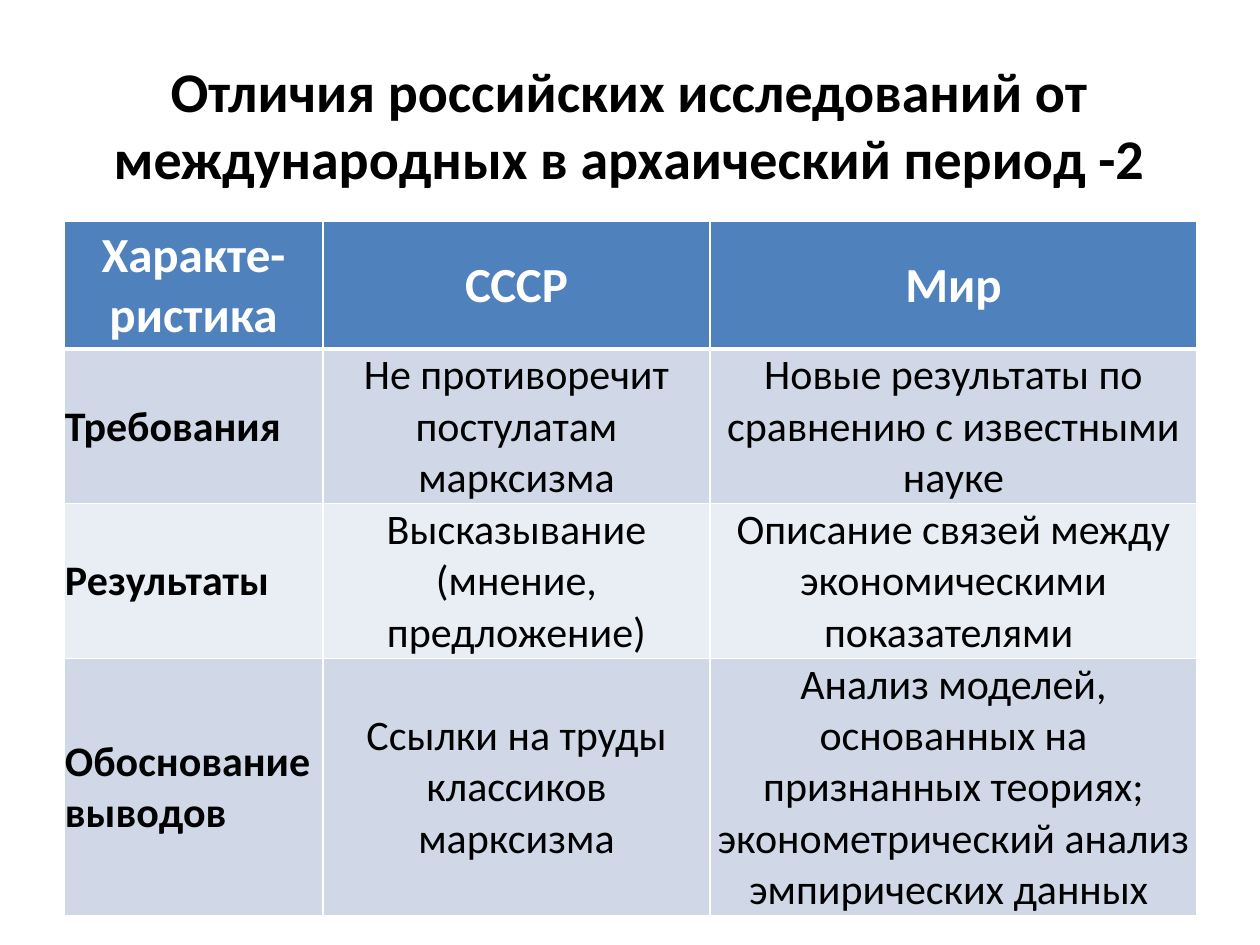
from dataclasses import dataclass

from lxml.etree import fromstring
from pptx import Presentation
from pptx.dml.color import RGBColor
from pptx.enum.text import MSO_ANCHOR as Anchor, MSO_AUTO_SIZE as AutoSize, PP_ALIGN as Align
from pptx.oxml.ns import nsdecls
from pptx.util import Pt

TITLE = "Отличия российских исследований от международных в архаический период -2"
ROWS = [
    ("Характе-ристика", "СССР", "Мир"),
    ("Требования",
     "Не противоречит постулатам марксизма",
     "Новые результаты по сравнению с известными науке"),
    ("Результаты",
     "Высказывание (мнение, предложение)",
     "Описание связей между экономическими показателями "),
    ("Обоснование выводов",
     "Ссылки на труды классиков марксизма",
     "Анализ моделей, основанных на признанных теориях; "
     "эконометрический анализ эмпирических данных "),
]

# Lengths in px, 126 to the inch
PX = 914400 // 126
SLIDE = (1260, 945)
TITLE_BOX = (44, 45, 1171, 158)
TABLE_BOX = (64, 221, 1133, 685)
COL_WIDTHS = (259, 387, 487)
ROW_HEIGHTS = (128, 145, 147, 219)
CELL_INSET = 1


@dataclass(frozen=True)
class Theme:
    font: str = "Calibri"
    text: str = "000000"
    inverse: str = "FFFFFF"
    header: str = "4F81BD"
    bands: tuple = ("E9EDF4", "D0D8E8")
    title_size: int = 32
    header_size: int = 28
    body_size: int = 24
    rule: int = 1
    header_rule: int = 3


THEME = Theme()


def emu(lengths):
    return [n * PX for n in lengths]


def write(tf, text, size, color, bold, align):
    p = tf.paragraphs[0]
    p.alignment = align
    r = p.add_run()
    r.text = text
    r.font.name = THEME.font
    r.font.size = Pt(size)
    r.font.bold = bold
    r.font.color.rgb = RGBColor.from_string(color)


def set_borders(cell, bottom):
    """Draw all four cell edges; they must precede the fill in the XML."""
    widths = {"L": THEME.rule, "R": THEME.rule, "T": THEME.rule, "B": bottom}
    tc_pr = cell._tc.get_or_add_tcPr()
    for i, (side, width) in enumerate(widths.items()):
        tc_pr.insert(i, fromstring(
            f'<a:ln{side} {nsdecls("a")} w="{Pt(width)}"><a:solidFill>'
            f'<a:srgbClr val="{THEME.inverse}"/></a:solidFill></a:ln{side}>'))


def format_cell(cell, text, row, col):
    header = row == 0
    cell.vertical_anchor = Anchor.MIDDLE
    cell.margin_left = cell.margin_right = cell.margin_top = CELL_INSET * PX
    cell.margin_bottom = 0
    cell.fill.solid()
    fill = THEME.header if header else THEME.bands[row % 2]
    cell.fill.fore_color.rgb = RGBColor.from_string(fill)
    # The header rule is shared with the top edge of the first body row
    set_borders(cell, THEME.header_rule if header else THEME.rule)
    if row == 1:
        cell._tc.tcPr.find("{*}lnT").set("w", str(Pt(THEME.header_rule)))
    write(cell.text_frame, text,
          THEME.header_size if header else THEME.body_size,
          THEME.inverse if header else THEME.text,
          header or col == 0,
          Align.CENTER if header or col else Align.LEFT)


def add_title(slide):
    title = slide.shapes.title
    title.left, title.top, title.width, title.height = emu(TITLE_BOX)
    tf = title.text_frame
    tf.word_wrap = True
    tf.auto_size = AutoSize.NONE
    tf.vertical_anchor = Anchor.MIDDLE
    write(tf, TITLE, THEME.title_size, THEME.text, True, Align.CENTER)


def add_comparison(slide):
    frame = slide.shapes.add_table(len(ROWS), len(ROWS[0]), *emu(TABLE_BOX))
    table = frame.table
    for column, width in zip(table.columns, emu(COL_WIDTHS)):
        column.width = width
    for row, height in zip(table.rows, emu(ROW_HEIGHTS)):
        row.height = height
    frame.height = TABLE_BOX[3] * PX
    for i, texts in enumerate(ROWS):
        for j, text in enumerate(texts):
            format_cell(table.cell(i, j), text, i, j)


def main():
    prs = Presentation()
    prs.slide_width, prs.slide_height = emu(SLIDE)
    slide = prs.slides.add_slide(prs.slide_layouts.get_by_name("Title Only"))
    add_title(slide)
    add_comparison(slide)
    prs.save("out.pptx")


if __name__ == "__main__":
    main()
